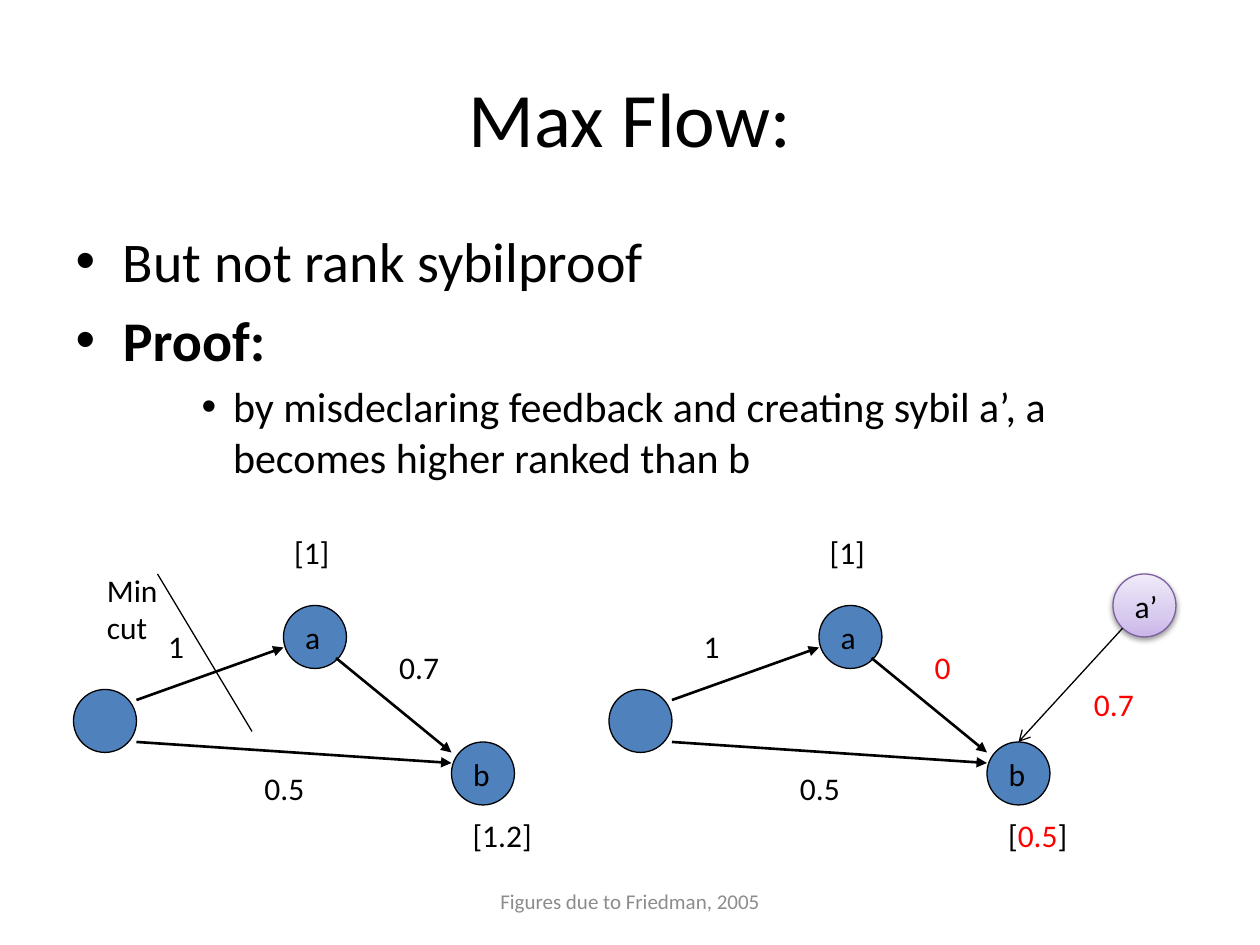
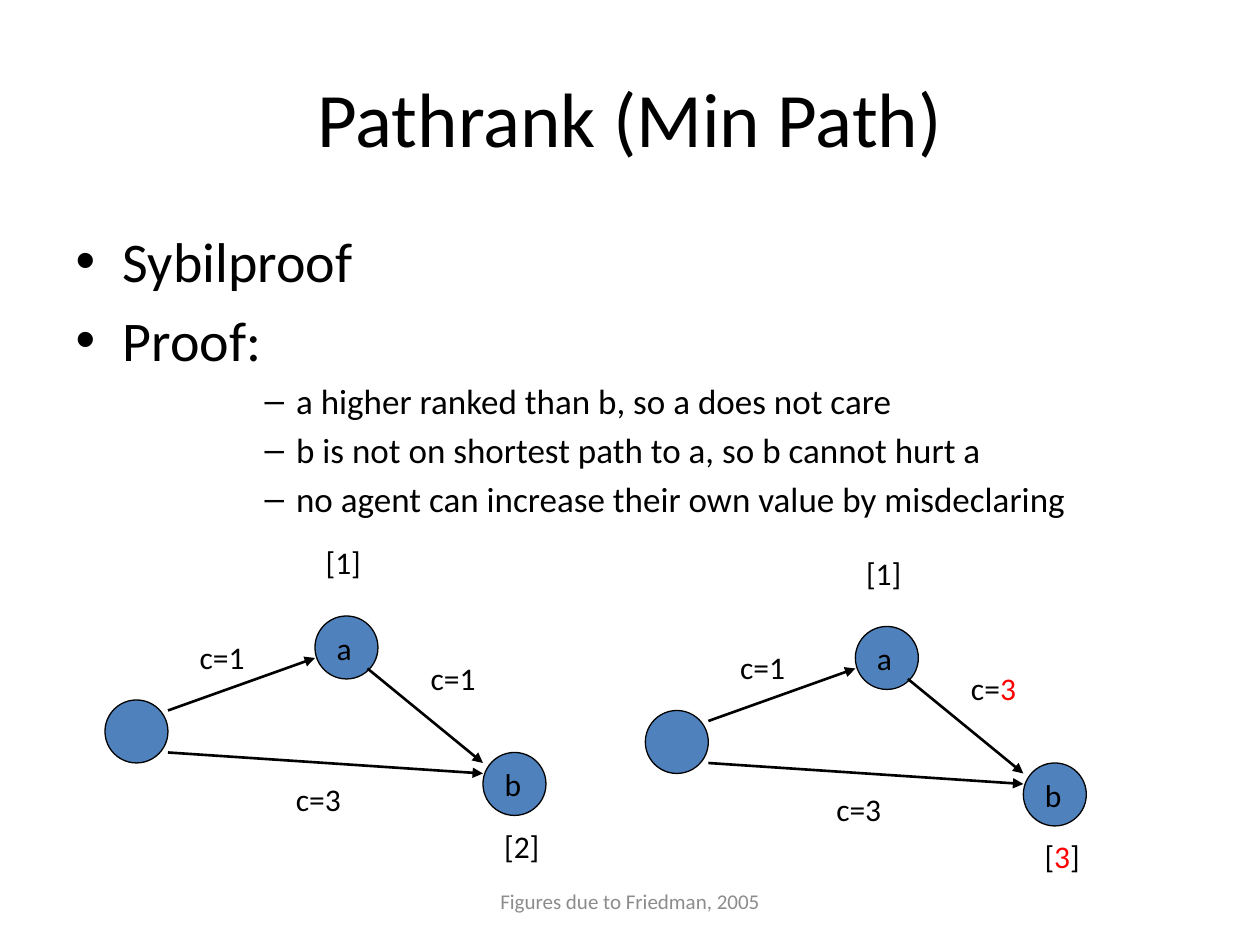
from copy import deepcopy
from lxml.etree import SubElement as Sub
from pptx import Presentation
from pptx.dml.color import RGBColor as Rgb
from pptx.enum.shapes import MSO_CONNECTOR as Link, MSO_SHAPE as Form
from pptx.enum.text import MSO_ANCHOR as Anchor, PP_ALIGN as Align
from pptx.oxml.ns import qn
from pptx.util import Pt

HUES = {
    "ink": "000000",
    "red": "FF0000",
    "node": "4F81BD",
    "note": "8C8C8C",
    "edge": "7D60A0",
    "low": "C9B5E8",
    "mid": "D8CBEE",
    "high": "F0EAF9",
}
FONT = "Calibri"
SIZE = 36
SIZES = {0: 32, 2: 24, 3: 20}
THIN = "[]. it"


def hue(name):
    return Rgb.from_string(HUES[name])


def style(run, size, tint="ink"):
    run.font.name = FONT
    run.font.size = Pt(size)
    run.font.color.rgb = hue(tint)


def place(shape, left, top, width, height):
    shape.left, shape.top = Pt(left), Pt(top)
    shape.width, shape.height = Pt(width), Pt(height)


def start(deck, title, items):
    slide = deck.slides.add_slide(deck.slide_layouts[1])
    head, body = slide.placeholders
    place(head, 36, 21.6, 648, 90)
    head.text_frame.text = title
    style(head.text_frame.paragraphs[0].runs[0], 44)
    place(body, 36, 126, 648, 356.4)
    frame = body.text_frame
    frame.text = "\n".join(text for text, level, bold in items)
    for para, (text, level, bold) in zip(frame.paragraphs, items):
        para.level = level
        run = para.runs[0]
        style(run, SIZES[level])
        run.font.bold = bold
    return slide


def credit(slide):
    box = slide.shapes.add_textbox(Pt(246), Pt(500.5), Pt(228), Pt(28.8))
    frame = box.text_frame
    frame.word_wrap = True
    frame.vertical_anchor = Anchor.MIDDLE
    frame.text = "Figures due to Friedman, 2005"
    para = frame.paragraphs[0]
    para.alignment = Align.CENTER
    style(para.runs[0], 12, "note")


def label(slide, left, top, marked):
    parts = marked.split("|")
    width = 14.5 + sum(5 if sign in THIN else 10 for sign in "".join(parts))
    box = slide.shapes.add_textbox(Pt(left), Pt(top), Pt(width), Pt(29))
    box.text_frame.word_wrap = False
    para = box.text_frame.paragraphs[0]
    for index, part in enumerate(parts):
        if part:
            run = para.add_run()
            run.text = part
            style(run, 18, "red" if index % 2 else "ink")


def node(slide, left, top, name=""):
    dot = slide.shapes.add_shape(Form.OVAL, Pt(left), Pt(top), Pt(SIZE), Pt(SIZE))
    dot.shadow.inherit = False
    dot.fill.solid()
    dot.fill.fore_color.rgb = hue("node")
    dot.line.color.rgb = hue("ink")
    dot.line.width = Pt(0.75)
    if name:
        frame = dot.text_frame
        frame.text = name
        frame.word_wrap = False
        frame.vertical_anchor = Anchor.MIDDLE
        para = frame.paragraphs[0]
        para.alignment = Align.LEFT
        style(para.runs[0], 18)
    return dot


def sybil(slide, left, top, name):
    dot = node(slide, left, top, name)
    dot.line.color.rgb = hue("edge")
    dot.fill.gradient()
    dot.fill.gradient_angle = 90
    props = dot._element.spPr
    stops = props.find(".//" + qn("a:gsLst"))
    stops.insert(1, deepcopy(stops[0]))
    shades = (0, "low"), (0.35, "mid"), (1, "high")
    for stop, (spot, tint) in zip(dot.fill.gradient_stops, shades):
        stop.position = spot
        stop.color.rgb = hue(tint)
    cast = Sub(props.find(qn("a:effectLst")), qn("a:outerShdw"),
               blurRad=str(Pt(3.1)), dist=str(Pt(1.6)), dir="5400000", rotWithShape="0")
    tone = Sub(cast, qn("a:srgbClr"), val=HUES["ink"])
    Sub(tone, qn("a:alpha"), val="38000")


def line(slide, ends, width=0.75, tip=None):
    wire = slide.shapes.add_connector(Link.STRAIGHT, *map(Pt, ends))
    wire.line.color.rgb = hue("ink")
    wire.line.width = Pt(width)
    if tip:
        Sub(wire.line._get_or_add_ln(), qn("a:tailEnd"), type=tip)
    Sub(wire._element.spPr, qn("a:effectLst"))


def graph(slide, left, top, texts):
    for dx, dy, name in (0, 48, ""), (120, 0, "a"), (216, 78, "b"):
        node(slide, left + dx, top + dy, name)
    for x1, y1, x2, y2 in (36, 54, 120, 24), (150, 30, 216, 84), (36, 78, 216, 90):
        line(slide, (left + x1, top + y1, left + x2, top + y2), 1.5, "triangle")
    spots = (47, 9), (102, 90), (179, 21), (221, 117), (119, -45)
    for (dx, dy), text in zip(spots, texts):
        label(slide, left + dx, top + dy, text)


def main():
    deck = Presentation()
    deck.slide_width, deck.slide_height = Pt(720), Pt(540)

    flow = start(deck, "Max Flow:", [
        ("But not rank sybilproof", 0, False),
        ("Proof:", 0, True),
        ("by misdeclaring feedback and creating sybil a’, a becomes higher ranked than b",
         2, False),
    ])
    graph(flow, 42, 346, ["1", "0.5", "0.7", "[1.2]", "[1]"])
    line(flow, (90, 328, 144, 418))
    label(flow, 54, 322.5, "Min cut")
    graph(flow, 348, 346, ["1", "0.5", "|0|", "[|0.5|]", "[1]"])
    sybil(flow, 636, 328, "a’")
    line(flow, (641.5, 359, 582, 424), tip="arrow")
    label(flow, 618, 388, "|0.7|")
    credit(flow)

    rank = start(deck, "Pathrank (Min Path)", [
        ("Sybilproof", 0, False),
        ("Proof:", 0, False),
        ("a higher ranked than b, so a does not care", 3, False),
        ("b is not on shortest path to a, so b cannot hurt a", 3, False),
        ("no agent can increase their own value by misdeclaring", 3, False),
    ])
    graph(rank, 60, 352, ["c=1", "c=3", "c=1", "[2]", "[1]"])
    graph(rank, 368.8, 358, ["c=1", "c=3", "c=|3|", "[|3|]", "[1]"])
    credit(rank)

    deck.save("out.pptx")


if __name__ == "__main__":
    main()
